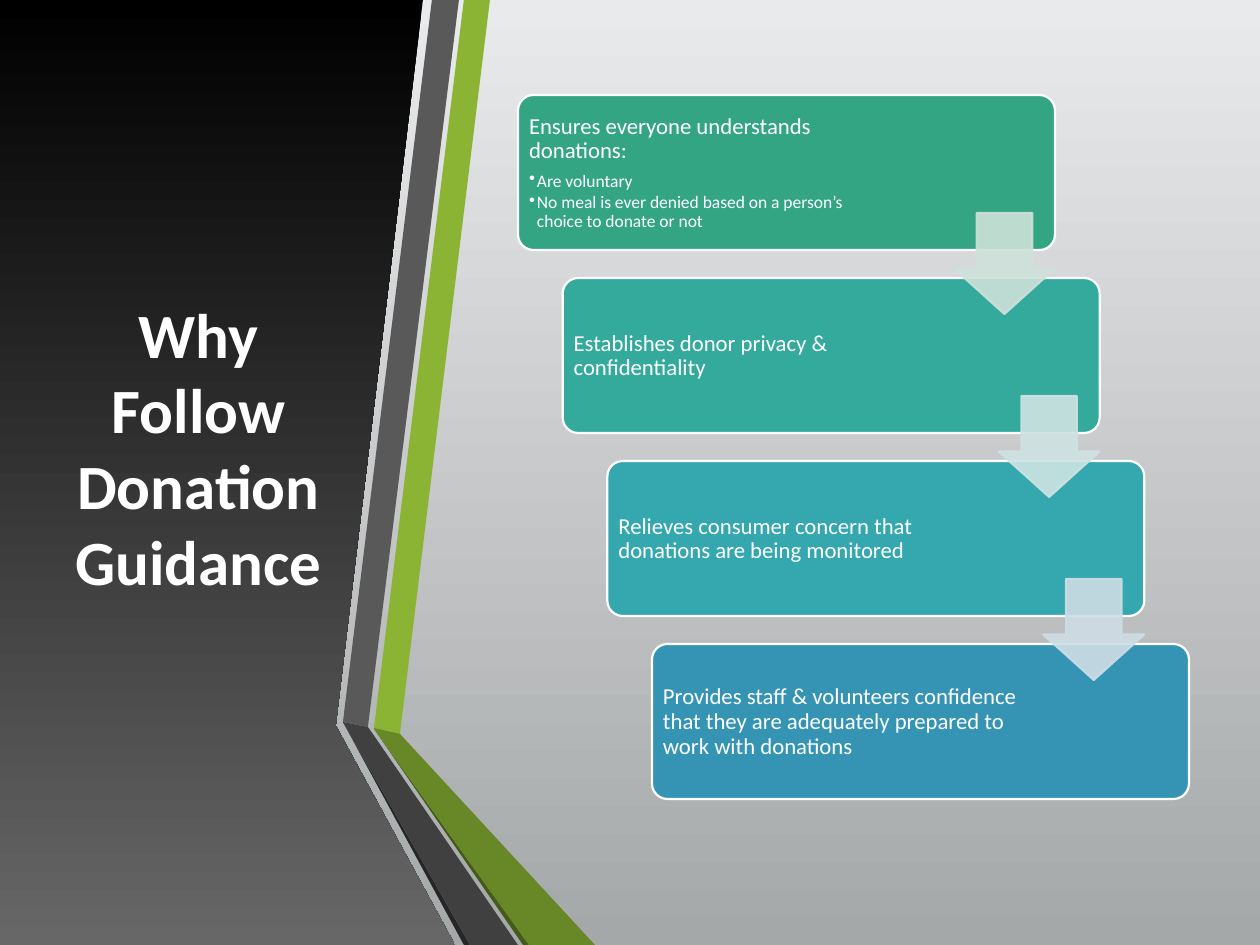
from collections import namedtuple
from dataclasses import dataclass

from pptx import Presentation
from pptx.dml.color import RGBColor
from pptx.enum.shapes import MSO_SHAPE as Shape
from pptx.enum.text import MSO_ANCHOR as Anchor, PP_ALIGN as Align
from pptx.oxml.ns import qn
from pptx.util import Emu, Pt
from lxml.etree import SubElement

EMU_PER_PX = 914400 / 126
Box = namedtuple("Box", "x y w h")
Step = namedtuple("Step", "text bullets color arrow text_w")


@dataclass(frozen=True)
class Theme:
    font: str = "Calibri"
    white: str = "FFFFFF"
    backdrop: tuple = ("E9EAEB", "A5A8A9")
    panel: tuple = ("000000", "676767")
    green: str = "8BB434"
    green_fold: str = "688727"
    green_edge: str = "465A1A"
    gray: str = "595959"
    gray_fold: str = "404040"
    gray_edge: str = "262626"
    title: int = 36
    body: int = 13
    bullet: int = 10
    outline: float = 1.25
    arrow_alpha: int = 90


THEME = Theme()
SLIDE = Box(0, 0, 1260, 945)
STEPS = [
    Step("Ensures everyone understands donations:",
         ["Are voluntary",
          "No meal is ever denied based on a person’s choice to donate or not"],
         "33A583", "CEE1D9", 357),
    Step("Establishes donor privacy & confidentiality", [], "34AA9C", "CEE3E2", 382),
    Step("Relieves consumer concern that donations are being monitored", [],
         "34A7AF", "CEDDE5", 382),
    Step("Provides staff & volunteers confidence that they are adequately "
         "prepared to work with donations", [], "3594B4", None, 382),
]


def px(n):
    return Emu(round(n * EMU_PER_PX))


def emu(box):
    return [px(n) for n in box]


def rgb(color):
    return RGBColor.from_string(color)


def fill_solid(fill, color):
    fill.solid()
    fill.fore_color.rgb = rgb(color)


def fill_down(fill, colors):
    """Fill with a gradient that runs from top to bottom."""
    fill.gradient()
    fill.gradient_angle = 270
    for stop, color, position in zip(fill.gradient_stops, colors, (0, 1)):
        stop.color.rgb = rgb(color)
        stop.position = position


def add_outline(sp, color):
    sp.line.color.rgb = rgb(color)
    sp.line.width = Pt(THEME.outline)


def set_alpha(sp, percent):
    """Make both the fill and the line of a shape translucent."""
    for color in sp._element.spPr.iter(qn("a:srgbClr")):
        SubElement(color, qn("a:alpha"), val=str(percent * 1000))


def add_plain(s, shape, box):
    sp = s.shapes.add_shape(shape, *emu(box))
    sp.shadow.inherit = False
    return sp


def add_polygon(s, box, points):
    (x, y), *rest = [(box.x + dx, box.y + dy) for dx, dy in points]
    builder = s.shapes.build_freeform(x, y, scale=EMU_PER_PX)
    builder.add_line_segments(rest, close=True)
    sp = builder.convert_to_shape()
    sp.shadow.inherit = False
    sp.line.fill.background()
    return sp


def add_text_frame(s, box, inset_x, inset_y):
    tf = s.shapes.add_textbox(*emu(box)).text_frame
    tf.word_wrap = True
    tf.vertical_anchor = Anchor.MIDDLE
    tf.margin_left = tf.margin_right = px(inset_x)
    tf.margin_top = tf.margin_bottom = px(inset_y)
    return tf


def style_runs(p, size, bold=False):
    for r in p.runs:
        r.font.name = THEME.font
        r.font.size = Pt(size)
        r.font.bold = bold
        r.font.color.rgb = rgb(THEME.white)


def make_bullet(p):
    p.level = 1
    pPr = p._p.get_or_add_pPr()
    pPr.set("marL", str(px(8)))
    pPr.set("indent", str(-px(8)))
    SubElement(pPr, qn("a:buChar"), char="•")


def add_backdrop(s, box):
    fill_down(s.background.fill, THEME.backdrop)
    sp = add_plain(s, Shape.RECTANGLE, box)
    fill_down(sp.fill, THEME.backdrop)
    sp.line.fill.background()


def add_title_panel(s, box, title):
    panel = add_polygon(s, box, [(0, 0), (423, 0), (336, 724), (336, 726),
                                 (455, box.h), (0, box.h)])
    fill_down(panel.fill, THEME.panel)
    tf = add_text_frame(s, Box(box.x + 55, box.y + 95, 287, 703), 13, 6)
    tf.text = title
    p = tf.paragraphs[0]
    p.alignment = Align.CENTER
    style_runs(p, THEME.title, bold=True)


def add_folded_ribbons(s, box):
    end = box.h
    pieces = [
        (THEME.green, [(31, 728), (57, 734), (147, 0), (121, 0)]),
        (THEME.gray, [(116, 0), (89, 0), (0, 722), (25, 727)]),
        (THEME.gray_edge, [(0, 722), (121, end), (127, end)]),
        (THEME.green_edge, [(31, 729), (180, end), (186, end)]),
        (THEME.green_fold, [(31, 729), (186, end), (252, end), (57, 734), (31, 728)]),
        (THEME.gray_fold, [(175, end), (30, 734), (25, 727), (0, 722), (127, end)]),
    ]
    for color, points in pieces:
        fill_solid(add_polygon(s, box, points).fill, color)


def add_card(s, box, step):
    sp = add_plain(s, Shape.ROUNDED_RECTANGLE, box)
    sp.adjustments[0] = 0.1
    fill_solid(sp.fill, step.color)
    add_outline(sp, THEME.white)

    tf = add_text_frame(s, Box(box.x + 5, box.y + 5, step.text_w, box.h - 9), 6, 6)
    tf.text = "\n".join([step.text, *step.bullets])
    for i, p in enumerate(tf.paragraphs):
        if i:
            make_bullet(p)
        size, gap = (THEME.bullet, 0.15) if i else (THEME.body, 0.35)
        p.alignment = Align.LEFT
        p.line_spacing = 0.9
        p.space_after = Pt(size * gap)
        style_runs(p, size)


def add_arrow(s, card, color):
    """Place an arrow at the right edge of a card, pointing to the next one."""
    side = 101
    sp = add_plain(s, Shape.DOWN_ARROW,
                   Box(card.x + card.w - side, card.y + 118, side, side))
    sp.adjustments[0], sp.adjustments[1] = 0.55, 0.45
    fill_solid(sp.fill, color)
    add_outline(sp, color)
    set_alpha(sp, THEME.arrow_alpha)


def add_staircase(s, box, steps):
    w, h = 537, 155
    gaps = len(steps) - 1
    dx, dy = (box.w - w) / gaps, (box.h - h) / gaps
    cards = [Box(box.x + i * dx, box.y + i * dy, w, h) for i in range(len(steps))]
    for card, step in zip(cards, steps):
        add_card(s, card, step)
    for card, step in zip(cards[:-1], steps):
        add_arrow(s, card, step.arrow)


def main():
    prs = Presentation()
    prs.slide_width, prs.slide_height = px(SLIDE.w), px(SLIDE.h)
    s = prs.slides.add_slide(prs.slide_layouts[6])
    add_backdrop(s, SLIDE)
    add_title_panel(s, Box(0, 0, 455, SLIDE.h), "Why Follow Donation Guidance")
    add_folded_ribbons(s, Box(343, 0, 252, SLIDE.h))
    add_staircase(s, Box(518, 95, 671, 704), STEPS)
    prs.save("out.pptx")


if __name__ == "__main__":
    main()
